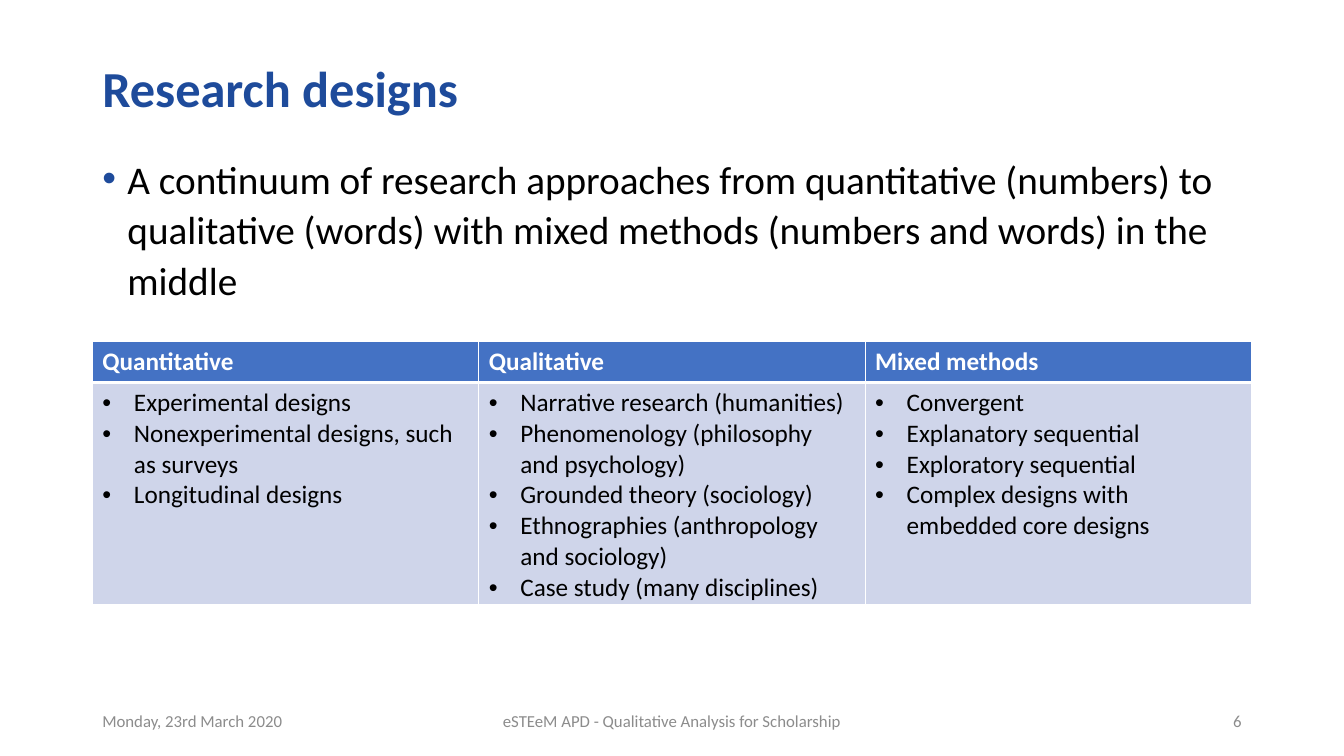
from lxml.etree import SubElement
from pptx import Presentation
from pptx.dml.color import RGBColor
from pptx.enum.text import MSO_ANCHOR, PP_ALIGN
from pptx.oxml.ns import qn
from pptx.util import Pt

FONT = "Calibri"
BLUE = RGBColor(0x1E, 0x4B, 0x9B)
HEADER_FILL = RGBColor(0x44, 0x72, 0xC4)
BODY_FILL = RGBColor(0xCF, 0xD5, 0xEA)
GRAY = RGBColor(0x8C, 0x8C, 0x8C)
BLACK = RGBColor(0, 0, 0)
WHITE = RGBColor(0xFF, 0xFF, 0xFF)

MARGIN = 66
CONTENT_WIDTH = 828

DESIGNS = {
    "Quantitative": [
        "Experimental designs",
        "Nonexperimental designs, such as surveys",
        "Longitudinal designs",
    ],
    "Qualitative": [
        "Narrative research (humanities)",
        "Phenomenology (philosophy and psychology)",
        "Grounded theory (sociology)",
        "Ethnographies (anthropology and sociology)",
        "Case study (many disciplines)",
    ],
    "Mixed methods": [
        "Convergent",
        "Explanatory sequential",
        "Exploratory sequential",
        "Complex designs with embedded core designs",
    ],
}


def add_run(paragraph, text, size, color, bold=False):
    run = paragraph.add_run()
    run.text = text
    run.font.name = FONT
    run.font.size = Pt(size)
    run.font.bold = bold
    run.font.color.rgb = color


def add_bullet(paragraph, indent, color):
    """Give the paragraph a round bullet with a hanging indent in points."""
    properties = paragraph._p.get_or_add_pPr()
    properties.set("marL", str(Pt(indent)))
    properties.set("indent", str(-Pt(indent)))
    bullet_color = SubElement(properties, qn("a:buClr"))
    SubElement(bullet_color, qn("a:srgbClr"), val=str(color))
    SubElement(properties, qn("a:buFont"), typeface="Arial")
    SubElement(properties, qn("a:buChar"), char="•")


def add_text_box(slide, left, top, width, height, anchor=MSO_ANCHOR.MIDDLE):
    """Add a wrapping text box and return its first paragraph."""
    shape = slide.shapes.add_textbox(Pt(left), Pt(top), Pt(width), Pt(height))
    shape.text_frame.word_wrap = True
    shape.text_frame.vertical_anchor = anchor
    return shape.text_frame.paragraphs[0]


def add_title(slide, left, top, width, height):
    paragraph = add_text_box(slide, left, top, width, height)
    paragraph.line_spacing = 1.08
    add_run(paragraph, "Research designs", 36, BLUE, bold=True)


def add_introduction(slide, left, top, width, height):
    paragraph = add_text_box(slide, left, top, width, height, MSO_ANCHOR.TOP)
    add_bullet(paragraph, 18, BLUE)
    paragraph.line_spacing = 1.08
    add_run(paragraph, "A continuum of research approaches from quantitative (numbers) to "
            "qualitative (words) with mixed methods (numbers and words) in the middle", 28, BLACK)


def set_borders(cell, **widths):
    """Draw white cell borders; widths in points by side L, R, T, B."""
    properties = cell._tc.get_or_add_tcPr()
    for side in "LRTB":
        line = SubElement(properties, qn(f"a:ln{side}"), w=str(Pt(widths.get(side, 1))))
        fill = SubElement(line, qn("a:solidFill"))
        SubElement(fill, qn("a:srgbClr"), val=str(WHITE))


def fill_cell(cell, color):
    cell.fill.solid()
    cell.fill.fore_color.rgb = color


def add_designs_table(slide, left, top, width, height):
    header_height = 29.2
    frame = slide.shapes.add_table(2, len(DESIGNS), Pt(left), Pt(top), Pt(width), Pt(height))
    table = frame.table
    table.rows[0].height = Pt(header_height)
    table.rows[1].height = Pt(height - header_height)
    for column, (heading, designs) in enumerate(DESIGNS.items()):
        header, body = table.cell(0, column), table.cell(1, column)
        set_borders(header, B=3)
        fill_cell(header, HEADER_FILL)
        add_run(header.text_frame.paragraphs[0], heading, 18, WHITE, bold=True)

        set_borders(body, T=3)
        fill_cell(body, BODY_FILL)
        for index, design in enumerate(designs):
            text_frame = body.text_frame
            paragraph = text_frame.add_paragraph() if index else text_frame.paragraphs[0]
            add_bullet(paragraph, 22.5, BLACK)
            add_run(paragraph, design, 18, BLACK)


def add_footer(slide, left, top, width, height):
    side_width, center_width = 216, 324
    parts = [
        ("Monday, 23rd March 2020", left, side_width, PP_ALIGN.LEFT),
        ("eSTEeM APD - Qualitative Analysis for Scholarship",
         left + (width - center_width) / 2, center_width, PP_ALIGN.CENTER),
        ("6", left + width - side_width, side_width, PP_ALIGN.RIGHT),
    ]
    for text, part_left, part_width, alignment in parts:
        paragraph = add_text_box(slide, part_left, top, part_width, height)
        paragraph.alignment = alignment
        add_run(paragraph, text, 12, GRAY)


def main():
    presentation = Presentation()
    presentation.slide_width = Pt(960)
    presentation.slide_height = Pt(540)
    slide = presentation.slides.add_slide(presentation.slide_layouts[6])
    add_title(slide, MARGIN, 28.8, CONTENT_WIDTH, 64)
    add_introduction(slide, MARGIN, 104.4, CONTENT_WIDTH, 382)
    add_footer(slide, MARGIN, 500.4, CONTENT_WIDTH, 28.8)
    add_designs_table(slide, MARGIN, 244, CONTENT_WIDTH, 188)
    presentation.save("out.pptx")


if __name__ == "__main__":
    main()
